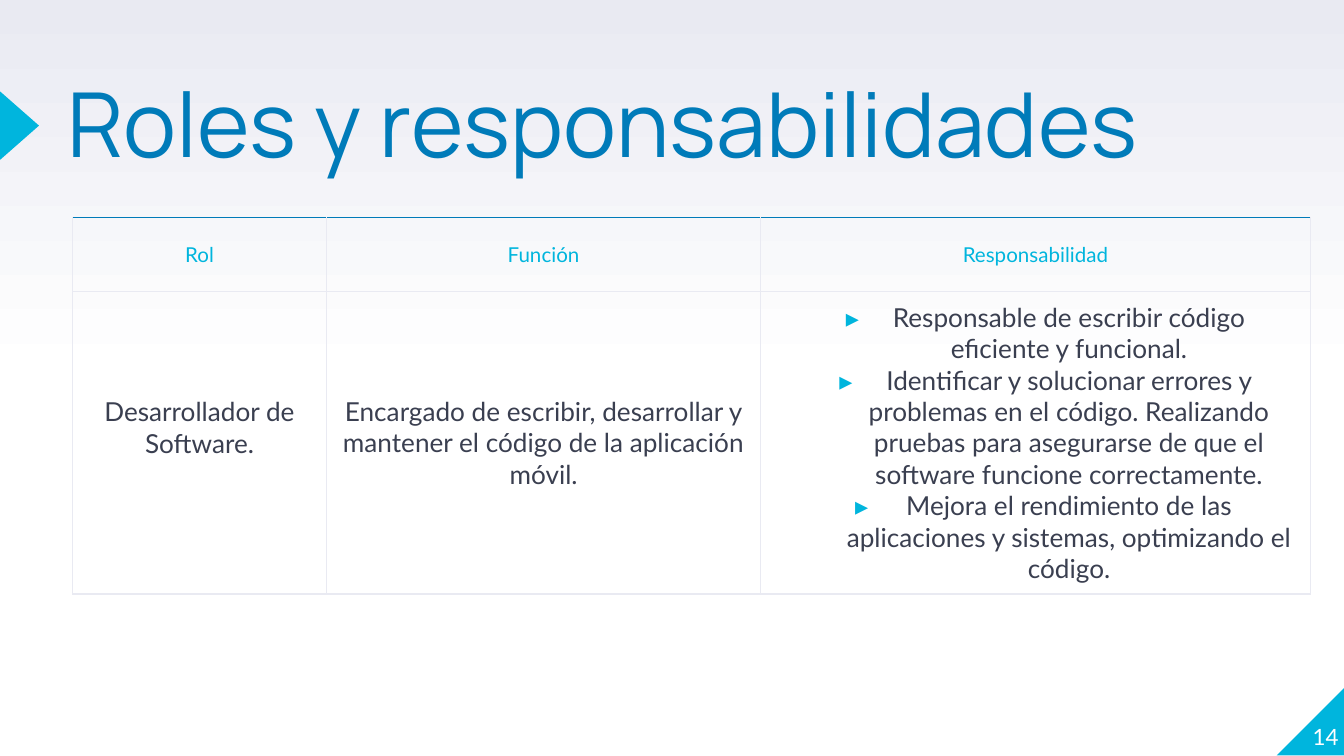
from copy import deepcopy
from dataclasses import dataclass

from lxml.etree import SubElement
from pptx import Presentation
from pptx.dml.color import RGBColor
from pptx.enum.shapes import MSO_SHAPE
from pptx.enum.text import MSO_ANCHOR, PP_ALIGN
from pptx.oxml.ns import qn
from pptx.util import Inches, Pt


@dataclass(frozen=True)
class Theme:
    cyan: str = "00B5DD"
    blue: str = "007BB9"
    ink: str = "3A3F50"
    pale: str = "E9EAF2"
    white: str = "FFFFFF"
    head: str = "Manrope"
    body: str = "Lato"
    title: int = 48
    label: int = 11
    text: int = 14
    page: int = 12
    rule: float = 0.75


THEME = Theme()
WIDTH = 10
HEIGHT = WIDTH * 9 / 16
COLS = (1.89, 3.23, 4.09)
ROWS = (0.55, 2.25)
LABELS = ("Rol", "Función", "Responsabilidad")
ROLE = "Desarrollador de Software."
TASK = "Encargado de escribir, desarrollar y mantener el código de la aplicación móvil."
DUTIES = (
    ("Responsable de escribir código eficiente y funcional.", 0.35),
    ("Identificar y solucionar errores y problemas en el código. Realizando "
     "pruebas para asegurarse de que el software funcione correctamente.", 0.35),
    ("Mejora el rendimiento de las aplicaciones y sistemas, optimizando el código.", 0.38),
)


def add_run(para, text, size, color, font=THEME.body):
    run = para.add_run()
    run.text = text
    run.font.size = Pt(size)
    run.font.name = font
    run.font.bold = False
    run.font.color.rgb = RGBColor.from_string(color)


def add_text(slide, box, anchor):
    frame = slide.shapes.add_textbox(*map(Inches, box)).text_frame
    frame.word_wrap = True
    frame.margin_left = frame.margin_right = 0
    frame.margin_top = frame.margin_bottom = 0
    frame.vertical_anchor = anchor
    return frame.paragraphs[0]


def add_mark(slide, kind, box):
    mark = slide.shapes.add_shape(kind, *map(Inches, box))
    mark.shadow.inherit = False
    mark.fill.solid()
    mark.fill.fore_color.rgb = RGBColor.from_string(THEME.cyan)
    mark.line.fill.background()
    return mark


def paint_back(slide):
    fill = slide.background.fill
    fill.gradient()
    fill.gradient_angle = 90
    stops = next(slide.element.iter(qn("a:gsLst")))
    stops.insert(1, deepcopy(stops[0]))
    colors = (THEME.white, THEME.white, THEME.pale)
    for stop, place, color in zip(fill.gradient_stops, (0, 0.5, 1), colors):
        stop.position = place
        stop.color.rgb = RGBColor.from_string(color)


def add_title(slide, box):
    left, top, width, height = box
    arrow = add_mark(slide, MSO_SHAPE.ISOSCELES_TRIANGLE,
                     (left - 0.61, top + 0.13, 0.51, 0.29))
    arrow.rotation = 90
    para = add_text(slide, box, MSO_ANCHOR.TOP)
    para.line_spacing = 0.8
    add_run(para, "Roles y responsabilidades", THEME.title, THEME.blue, THEME.head)


def set_edges(cell, top):
    props = cell._tc.get_or_add_tcPr()
    for side in "LRTB":
        line = SubElement(props, qn(f"a:ln{side}"), w=str(Pt(THEME.rule)))
        fill = SubElement(line, qn("a:solidFill"))
        color = top if side == "T" else THEME.pale
        SubElement(fill, qn("a:srgbClr"), val=color)
        SubElement(line, qn("a:prstDash"), val="solid")


def add_bullet(para, hang):
    props = para._p.get_or_add_pPr()
    props.set("marL", str(Inches(0.5)))
    props.set("indent", str(-Inches(hang)))
    color = SubElement(props, qn("a:buClr"))
    SubElement(color, qn("a:srgbClr"), val=THEME.cyan)
    SubElement(props, qn("a:buFont"), typeface=THEME.body)
    SubElement(props, qn("a:buChar"), char="▸")


def fill_cell(cell, items, size, color, top):
    set_edges(cell, top)
    cell.fill.background()
    cell.vertical_anchor = MSO_ANCHOR.MIDDLE
    cell.margin_top = cell.margin_bottom = Inches(0.07)
    frame = cell.text_frame
    for i, (text, hang) in enumerate(items):
        para = frame.add_paragraph() if i else frame.paragraphs[0]
        para.alignment = PP_ALIGN.CENTER
        if hang:
            add_bullet(para, hang)
        add_run(para, text, size, color)


def add_roles(slide, box):
    table = slide.shapes.add_table(len(ROWS), len(COLS), *map(Inches, box)).table
    table.first_row = table.horz_banding = False
    for col, width in zip(table.columns, COLS):
        col.width = Inches(width)
    for row, height in zip(table.rows, ROWS):
        row.height = Inches(height)
    bodies = ([(ROLE, 0)], [(TASK, 0)], DUTIES)
    for i, (label, items) in enumerate(zip(LABELS, bodies)):
        fill_cell(table.cell(0, i), [(label, 0)], THEME.label, THEME.cyan, THEME.blue)
        fill_cell(table.cell(1, i), items, THEME.text, THEME.ink, THEME.pale)
    table.cell(1, 0).margin_bottom = Inches(0.3)


def add_page(slide, box):
    left, top, width, height = box
    corner = add_mark(slide, MSO_SHAPE.RIGHT_TRIANGLE, box)
    corner.element.spPr.xfrm.set("flipH", "1")
    para = add_text(slide, (left - 0.04, top - 0.04, 0.5, height), MSO_ANCHOR.BOTTOM)
    para.alignment = PP_ALIGN.RIGHT
    add_run(para, "14", THEME.page, THEME.white)


def main():
    deck = Presentation()
    deck.slide_width, deck.slide_height = Inches(WIDTH), Inches(HEIGHT)
    slide = deck.slides.add_slide(deck.slide_layouts[6])
    paint_back(slide)
    add_title(slide, (0.5, 0.66, 9.28, 1.18))
    add_roles(slide, (0.54, 1.62, sum(COLS), sum(ROWS)))
    add_page(slide, (9.5, 5.11, 0.51, 0.51))
    deck.save("out.pptx")


if __name__ == "__main__":
    main()
